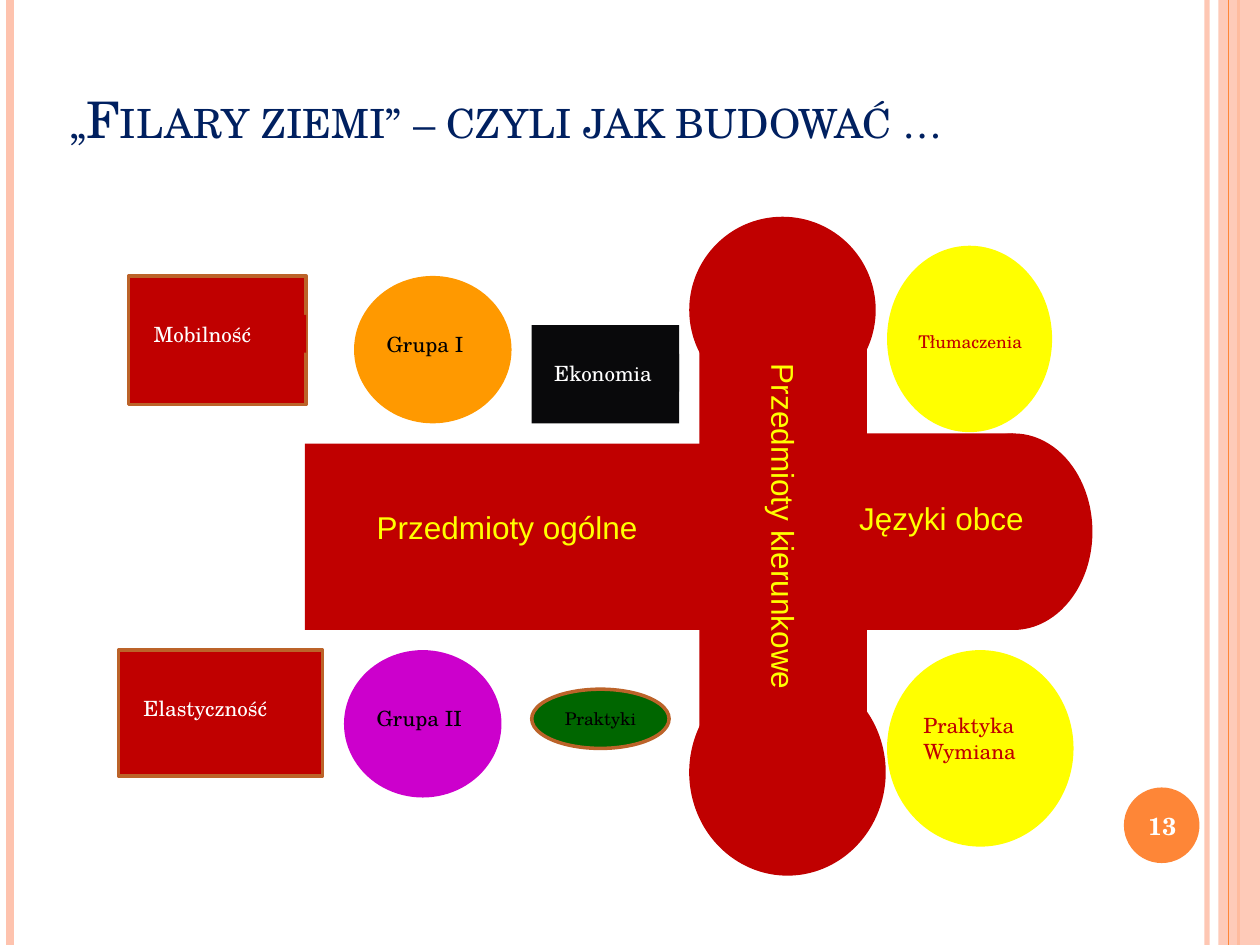
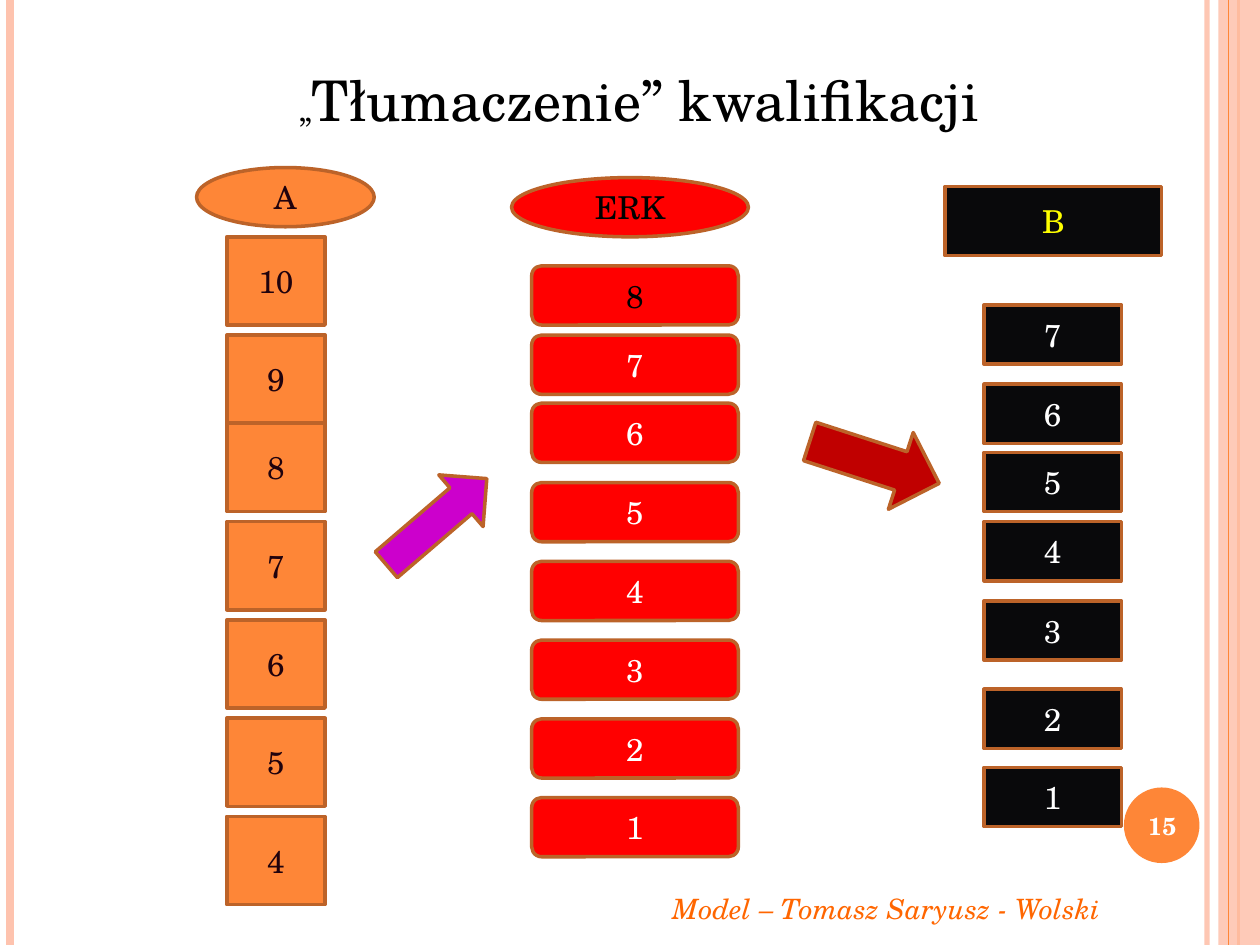
from dataclasses import dataclass

from lxml.etree import SubElement
from pptx import Presentation
from pptx.dml.color import RGBColor
from pptx.enum.shapes import MSO_CONNECTOR, MSO_SHAPE
from pptx.enum.text import MSO_ANCHOR, MSO_AUTO_SIZE, PP_ALIGN
from pptx.oxml.ns import qn
from pptx.util import Inches, Pt

C = {
    "band": "FEC3AE", "orange": "FE8637", "outline": "BC6329", "navy": "002060",
    "crimson": "C00000", "red": "FF0000", "yellow": "FFFF00", "ink": "09090B",
    "black": "000000", "white": "FFFFFF", "amber": "FF9900", "magenta": "CC00CC",
    "green": "006600", "maroon": "20020D", "credit": "FF6600",
}
SERIF, SANS = "TeX Gyre Schola", "Arial"
RECT, OVAL = MSO_SHAPE.RECTANGLE, MSO_SHAPE.OVAL
ROUNDED, ARROW = MSO_SHAPE.ROUNDED_RECTANGLE, MSO_SHAPE.RIGHT_ARROW
LEFT, CENTER, RIGHT = PP_ALIGN.LEFT, PP_ALIGN.CENTER, PP_ALIGN.RIGHT
TOP, MIDDLE, BOTTOM = MSO_ANCHOR.TOP, MSO_ANCHOR.MIDDLE, MSO_ANCHOR.BOTTOM


@dataclass
class Block:
    """A filled shape, with centred text if there is any."""
    kind: int
    at: tuple
    fill: str
    outline: bool = False
    text: str = ""
    size: float = 18
    color: str = "white"
    rotation: float = 0


@dataclass
class Label:
    """A text box anchored at the top, with an optional fill."""
    at: tuple
    text: str
    size: float = 12
    color: str = "white"
    fill: str = ""
    font: str = SERIF
    align: int = LEFT
    rotation: float = 0
    italic: bool = False


@dataclass
class Rule:
    """A vertical line over the full slide height."""
    x: float
    color: str
    width: float
    opacity: int = 100


@dataclass
class Scale:
    """A column of numbered levels; the lowest number stands at the bottom."""
    kind: int
    left: float
    size: tuple
    tops: list
    lowest: int
    fill: str
    color: str


# Text and drawing helpers
def rgb(name: str) -> RGBColor:
    return RGBColor.from_string(C[name])


def inches(at: tuple) -> list:
    return [Inches(v) for v in at]


def set_opacity(owner, percent: int) -> None:
    for clr in owner.iter(qn("a:srgbClr")):
        SubElement(clr, qn("a:alpha")).set("val", str(percent * 1000))


def add_run(p, text: str, *, size: float, color: str, font: str = SERIF,
            bold: bool = False, italic: bool = False, small_caps: bool = False) -> None:
    r = p.add_run()
    r.text = text
    r.font.name, r.font.size = font, Pt(size)
    r.font.bold, r.font.italic = bold, italic
    r.font.color.rgb = rgb(color)
    if small_caps:
        r.font._element.set("cap", "small")


def write(sp, text: str, *, align=LEFT, anchor=TOP, **fmt):
    tf = sp.text_frame
    tf.word_wrap, tf.auto_size = True, MSO_AUTO_SIZE.NONE
    tf.vertical_anchor = anchor
    for i, line in enumerate(text.split("\n")):
        p = tf.add_paragraph() if i else tf.paragraphs[0]
        p.alignment = align
        add_run(p, line, **fmt)
    return p


def draw_block(s, b: Block):
    sp = s.shapes.add_shape(b.kind, *inches(b.at))
    sp.shadow.inherit = False
    sp.rotation = b.rotation
    sp.fill.solid()
    sp.fill.fore_color.rgb = rgb(b.fill)
    if b.outline:
        sp.line.color.rgb, sp.line.width = rgb("outline"), Pt(2)
    else:
        sp.line.fill.background()
    if b.text:
        write(sp, b.text, size=b.size, color=b.color, align=CENTER, anchor=MIDDLE)
    return sp


def draw_label(s, label: Label) -> None:
    sp = s.shapes.add_textbox(*inches(label.at))
    sp.rotation = label.rotation
    if label.fill:
        sp.fill.solid()
        sp.fill.fore_color.rgb = rgb(label.fill)
    write(sp, label.text, size=label.size, color=label.color, font=label.font,
          align=label.align, italic=label.italic)


def draw_rule(s, rule: Rule) -> None:
    x = Inches(rule.x)
    line = s.shapes.add_connector(MSO_CONNECTOR.STRAIGHT, x, 0, x, Inches(7.5))
    line.line.color.rgb, line.line.width = rgb(rule.color), Pt(rule.width)
    if rule.opacity < 100:
        set_opacity(line._element.spPr, rule.opacity)
    SubElement(line._element.spPr, qn("a:effectLst"))


def draw_scale(s, scale: Scale) -> None:
    highest = scale.lowest + len(scale.tops) - 1
    for i, top in enumerate(scale.tops):
        level = highest - i
        color = "black" if scale.fill == "red" and i == 0 else scale.color
        draw_block(s, Block(scale.kind, (scale.left, top, *scale.size), scale.fill,
                            True, str(level), color=color))


def draw_all(s, items: list) -> None:
    for item in items:
        if isinstance(item, Block):
            draw_block(s, item)
        else:
            draw_label(s, item)


def evenly(first: float, last: float, count: int) -> list:
    return [first + (last - first) * i / (count - 1) for i in range(count)]


# Frame shared by both slides
def add_slide(prs, number: int, title_at: tuple):
    s = prs.slides.add_slide(prs.slide_layouts[5])
    title = s.shapes.title
    title.left, title.top, title.width, title.height = inches(title_at)
    draw_rule(s, Rule(9.58, "band", 3, 93))
    draw_rule(s, Rule(0.08, "band", 4.5))
    draw_rule(s, Rule(9.83, "orange", 1.5))
    band = draw_block(s, Block(RECT, (9.67, 0, 0.33, 7.5), "band"))
    set_opacity(band._element.spPr, 87)
    draw_rule(s, Rule(9.75, "orange", 0.75))
    draw_block(s, Block(OVAL, (8.92, 6.25, 0.6, 0.6), "orange"))
    page = s.shapes.add_textbox(*inches((8.89, 6.27, 0.67, 0.57)))
    write(page, str(number), size=14, color="white", bold=True,
          align=CENTER, anchor=MIDDLE)
    return s


# Slide 1: the cross of pillars and what surrounds it
CROSS = [
    Block(RECT, (2.42, 3.52, 3.15, 1.48), "crimson"),
    Block(RECT, (5.55, 2.66, 1.33, 3.2), "crimson"),
    Block(OVAL, (5.47, 1.72, 1.48, 1.48), "crimson"),
    Block(OVAL, (5.47, 5.31, 1.56, 1.64), "crimson"),
    Block(RECT, (6.87, 3.44, 1.17, 1.56), "crimson"),
    Block(OVAL, (7.42, 3.44, 1.25, 1.56), "crimson"),
    Label((2.42, 3.98, 3.21, 0.4), "Przedmioty ogólne", 18, "yellow",
          font=SANS, align=CENTER),
    Label((4.23, 3.98, 3.98, 0.4), "Przedmioty kierunkowe", 18, "yellow",
          font=SANS, align=CENTER, rotation=90),
    Label((6.72, 3.91, 1.64, 0.4), "Języki obce", 18, "yellow", font=SANS),
]
SURROUNDINGS = [
    Block(OVAL, (7.04, 1.95, 1.31, 1.48), "yellow"),
    Label((7.19, 2.58, 1.48, 0.27), "Tłumaczenia", 10, "crimson"),
    Block(OVAL, (7.04, 5.16, 1.48, 1.56), "yellow"),
    Label((7.23, 5.61, 1.19, 0.5), "Praktyka\nWymiana", color="crimson"),
    Block(RECT, (4.22, 2.58, 1.17, 0.78), "ink"),
    Label((4.3, 2.81, 1.09, 0.3), "Ekonomia", fill="ink"),
    Block(OVAL, (2.81, 2.19, 1.25, 1.17), "amber"),
    Label((2.97, 2.58, 0.94, 0.3), "Grupa I", color="black", fill="amber"),
    Block(OVAL, (2.73, 5.16, 1.25, 1.17), "magenta"),
    Label((2.89, 5.55, 0.94, 0.3), "Grupa II", color="black", fill="magenta"),
    Block(RECT, (1.02, 2.19, 1.41, 1.02), "crimson", True),
    Label((1.12, 2.5, 1.31, 0.3), "Mobilność", fill="crimson"),
    Block(RECT, (0.94, 5.16, 1.62, 1), "crimson", True),
    Label((1.04, 5.47, 1.54, 0.3), "Elastyczność"),
    Block(OVAL, (4.22, 5.47, 1.09, 0.47), "green", True, "Praktyki", 10, "black"),
]


def build_pillars(prs) -> None:
    s = add_slide(prs, 13, (0.46, 0.29, 7.67, 0.94))
    write(s.shapes.title, "„Filary ziemi” – czyli jak budować …", size=28.8,
          color="navy", small_caps=True, anchor=BOTTOM)
    draw_all(s, CROSS + SURROUNDINGS)


# Slide 2: three scales of levels, joined by arrows
SCALES = [
    Scale(ROUNDED, 4.22, (1.64, 0.47), [2.11, 2.66, 3.2] + evenly(3.83, 6.33, 5),
          1, "red", "white"),
    Scale(RECT, 7.81, (1.09, 0.47), [2.42, 3.05, 3.59, 4.14, 4.77, 5.47, 6.09],
          1, "ink", "white"),
    Scale(RECT, 1.8, (0.78, 0.7), [1.88, 2.66] + evenly(3.36, 6.48, 5),
          4, "orange", "maroon"),
]
HEADS_AND_ARROWS = [
    Block(OVAL, (1.56, 1.33, 1.41, 0.47), "orange", True, "A", color="maroon"),
    Block(OVAL, (4.06, 1.41, 1.88, 0.47), "red", True, "ERK", color="black"),
    Block(RECT, (7.5, 1.48, 1.72, 0.55), "ink", True, "B", color="yellow"),
    Block(ARROW, (2.94, 3.87, 1.05, 0.54), "magenta", True, rotation=319.4),
    Block(ARROW, (6.4, 3.35, 1.08, 0.64), "crimson", True, rotation=17.9),
    Label((2.03, 7.03, 6.8, 0.37), "Model – Tomasz Saryusz - Wolski", 16, "credit",
          align=RIGHT, italic=True),
]


def build_translation(prs) -> None:
    s = add_slide(prs, 15, (1.56, 0.47, 7.03, 0.64))
    p = write(s.shapes.title, "„", size=18, color="black", align=CENTER)
    add_run(p, "Tłumaczenie” kwalifikacji", size=32, color="black")
    for scale in SCALES:
        draw_scale(s, scale)
    draw_all(s, HEADS_AND_ARROWS)


def main() -> None:
    prs = Presentation()
    prs.slide_width, prs.slide_height = Inches(10), Inches(7.5)
    build_pillars(prs)
    build_translation(prs)
    prs.save("out.pptx")


if __name__ == "__main__":
    main()
